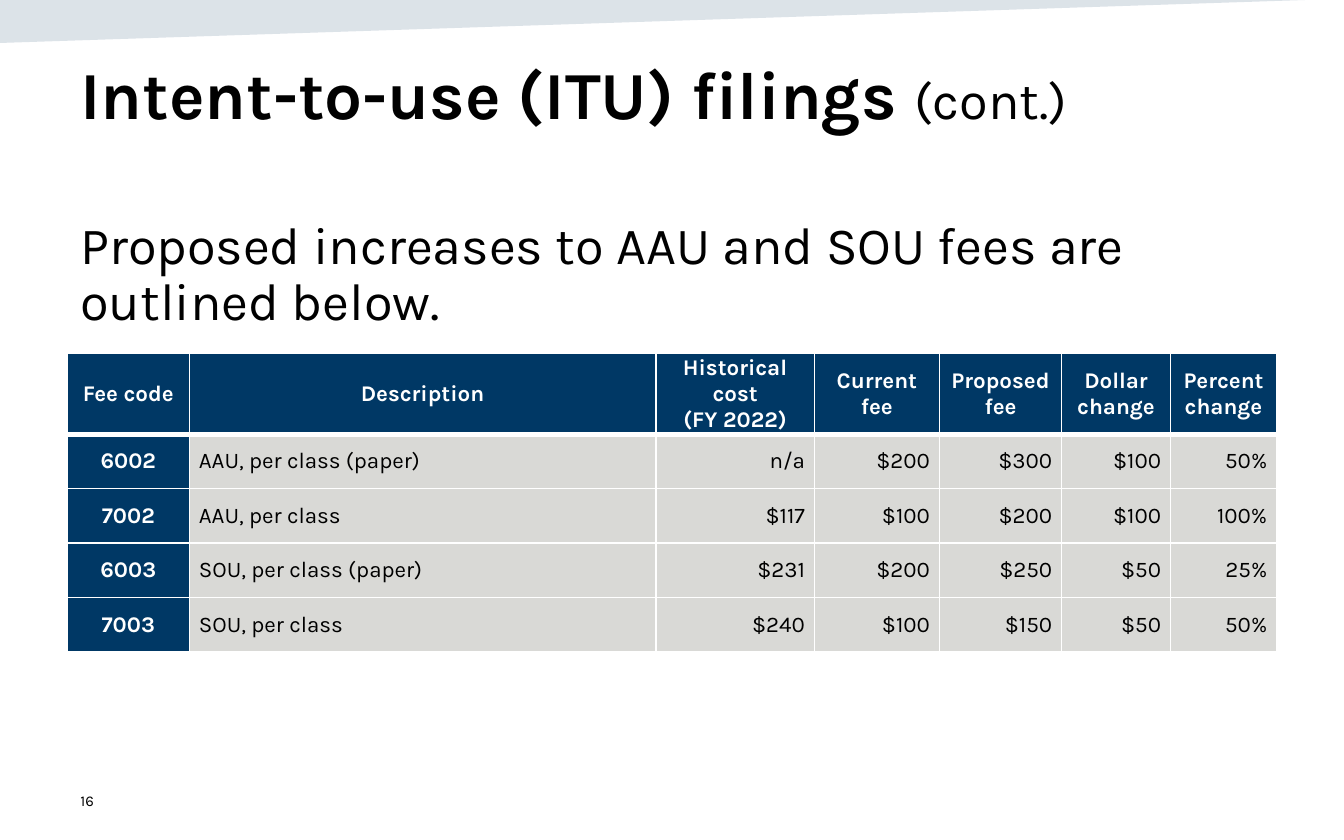
from typing import NamedTuple

from lxml.etree import SubElement
from pptx import Presentation
from pptx.dml.color import RGBColor
from pptx.enum.text import MSO_ANCHOR as Anchor, PP_ALIGN as Align
from pptx.oxml.ns import qn
from pptx.util import Inches, Pt

FONT = "Karla"
BLACK, WHITE, NAVY, GREY, BAND = "000000", "FFFFFF", "003865", "D9D9D6", "164469"


class Span(NamedTuple):
    text: str
    size: float
    bold: bool = False
    color: str = BLACK


class TextBox(NamedTuple):
    left: float
    top: float
    width: float
    height: float
    spans: list[Span]
    anchor: Anchor = Anchor.TOP
    spacing: dict = {}


class Fee(NamedTuple):
    code: str
    description: str
    cost: str
    current: str
    proposed: str
    dollar_change: str
    percent_change: str


TEXTS = [
    TextBox(0.5, 5.79, 2.25, 0.33, [Span("16", 8)], Anchor.MIDDLE),
    TextBox(0.5, 0.34, 9, 1.04, [Span("Intent-to-use (ITU) filings ", 36, True),
                                 Span("(cont.)", 28)]),
    TextBox(0.5, 1.58, 9, 1.02,
            [Span("Proposed increases to AAU and SOU fees are outlined below.", 28)],
            spacing={"line_spacing": 0.9, "space_before": Pt(9)}),
]
HEADINGS = Fee("Fee code", "Description", "Historical cost\n(FY 2022)", "Current fee",
               "Proposed fee", "Dollar change", "Percent change")
FEES = [
    Fee("6002", "AAU, per class (paper)", "n/a", "$200", "$300", "$100", "50%"),
    Fee("7002", "AAU, per class", "$117", "$100", "$200", "$100", "100%"),
    Fee("6003", "SOU, per class (paper)", "$231", "$200", "$250", "$50", "25%"),
    Fee("7003", "SOU, per class", "$240", "$100", "$150", "$50", "50%"),
]
COLUMN_WIDTHS = [0.91, 3.47, 1.18, 0.93, 0.91, 0.81, 0.79]
HEADER_HEIGHT, BODY_HEIGHT = 0.57, 1.62
COLUMN_ALIGNS = [Align.CENTER, Align.LEFT] + [Align.RIGHT] * 5


def rgb(color: str) -> RGBColor:
    return RGBColor.from_string(color)


def apply(target, values: dict) -> None:
    for name, value in values.items():
        setattr(target, name, value)


def add_span(para, span: Span) -> None:
    run = para.add_run()
    run.text = span.text
    apply(run.font, {"name": FONT, "size": Pt(span.size), "bold": span.bold})
    run.font.color.rgb = rgb(span.color)


def add_text(page, text: TextBox) -> None:
    box = page.shapes.add_textbox(*map(Inches, text[:4]))
    apply(box.text_frame, {"word_wrap": True, "vertical_anchor": text.anchor})
    para = box.text_frame.paragraphs[0]
    apply(para, text.spacing)
    for span in text.spans:
        add_span(para, span)


def add_band(page) -> None:
    """Draw the translucent wedge along the top edge."""
    builder = page.shapes.build_freeform(0, 0)
    builder.add_line_segments([(0, Inches(0.32)), (Inches(10.02), Inches(-0.01))])
    band = builder.convert_to_shape()
    band.shadow.inherit = False
    band.line.fill.background()
    band.fill.solid()
    band.fill.fore_color.rgb = rgb(BAND)
    color = band.fill._xPr.find(f".//{qn('a:srgbClr')}")
    SubElement(color, qn("a:alpha"), val="15000")


def set_borders(cell, bottom: float) -> None:
    properties = cell._tc.get_or_add_tcPr()
    widths = {"a:lnL": 1, "a:lnR": 1, "a:lnT": 1, "a:lnB": bottom}
    for place, (tag, width) in enumerate(widths.items()):
        line = SubElement(properties, qn(tag), w=str(Pt(width)))
        properties.insert(place, line)
        SubElement(SubElement(line, qn("a:solidFill")), qn("a:srgbClr"), val=WHITE)


def fill_cell(cell, text: str, align: Align, is_header: bool, is_code: bool) -> None:
    strong = is_header or is_code
    apply(cell, {"vertical_anchor": Anchor.MIDDLE,
                 "margin_left": Inches(0.07), "margin_right": Inches(0.07),
                 "margin_top": 0, "margin_bottom": 0})
    cell.fill.solid()
    cell.fill.fore_color.rgb = rgb(NAVY if strong else GREY)
    set_borders(cell, 3 if is_header else 1)
    gap = Pt(0 if is_header else 6)
    frame = cell.text_frame
    for index, line in enumerate(text.split("\n")):
        para = frame.add_paragraph() if index else frame.paragraphs[0]
        apply(para, {"alignment": align, "space_before": gap, "space_after": gap})
        add_span(para, Span(line, 12, strong, WHITE if strong else BLACK))


def add_fee_table(page) -> None:
    rows = [HEADINGS, *FEES]
    heights = [HEADER_HEIGHT] + [BODY_HEIGHT / len(FEES)] * len(FEES)
    table = page.shapes.add_table(
        len(rows), len(COLUMN_WIDTHS), Inches(0.5), Inches(2.63),
        Inches(sum(COLUMN_WIDTHS)), Inches(sum(heights))).table
    for column, width in zip(table.columns, COLUMN_WIDTHS):
        column.width = Inches(width)
    for r, (fee, height) in enumerate(zip(rows, heights)):
        table.rows[r].height = Inches(height)
        for c, text in enumerate(fee):
            align = COLUMN_ALIGNS[c] if r else Align.CENTER
            fill_cell(table.cell(r, c), text, align, r == 0, c == 0)


def main() -> None:
    deck = Presentation()
    apply(deck, {"slide_width": Inches(10), "slide_height": Inches(6.25)})
    page = deck.slides.add_slide(deck.slide_layouts[6])
    add_band(page)
    for text in TEXTS:
        add_text(page, text)
    add_fee_table(page)
    deck.save("out.pptx")


if __name__ == "__main__":
    main()
